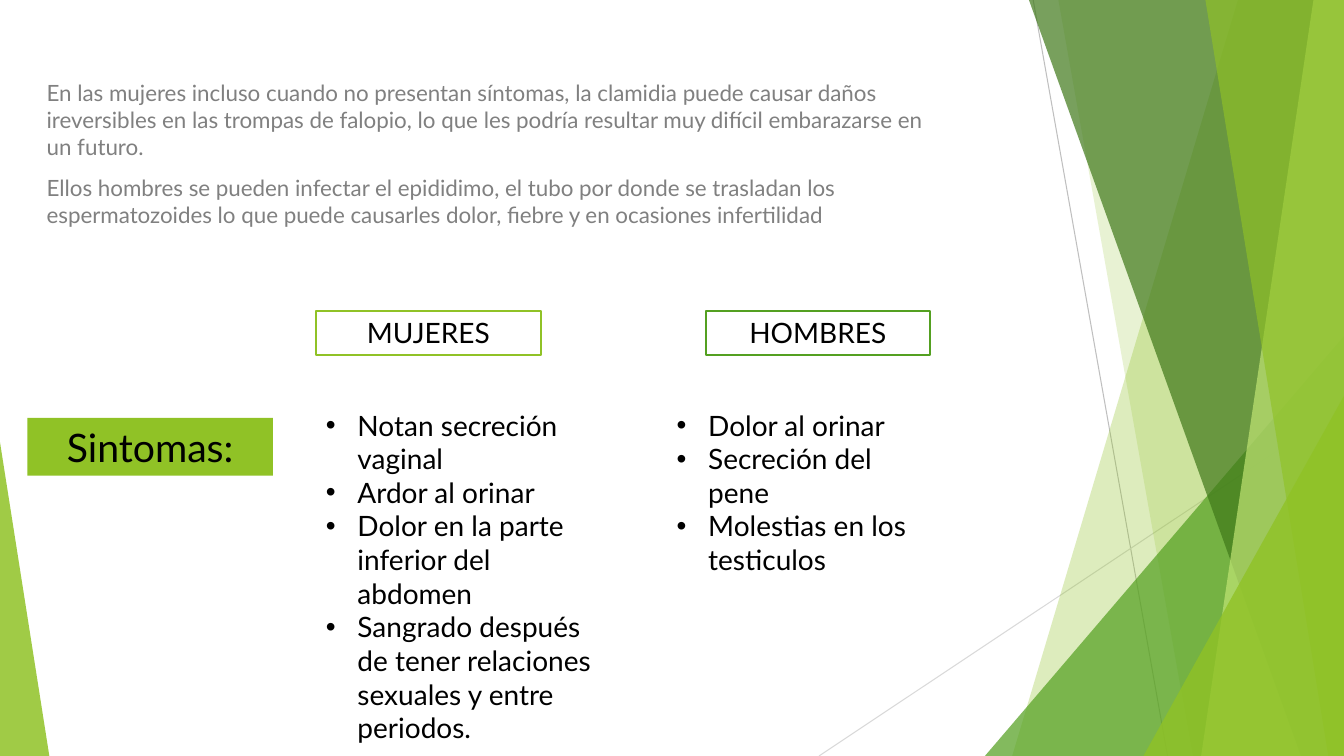
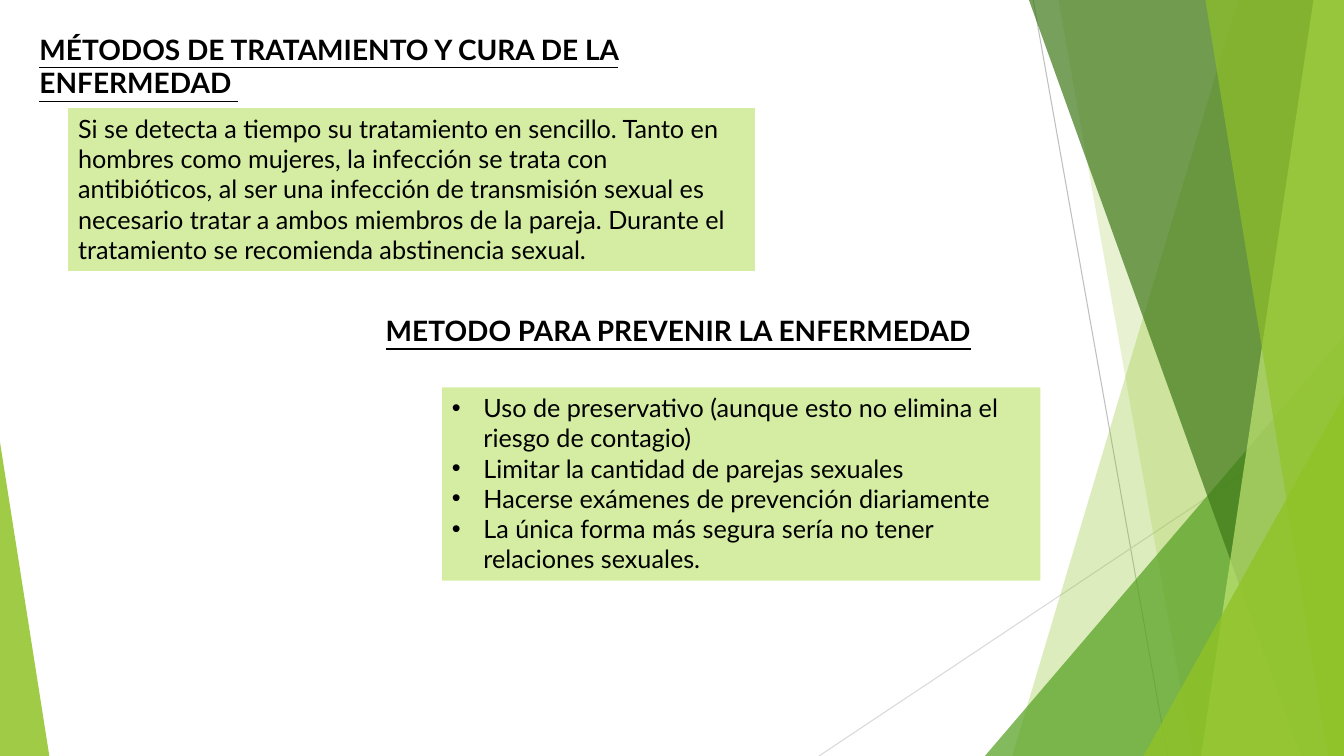
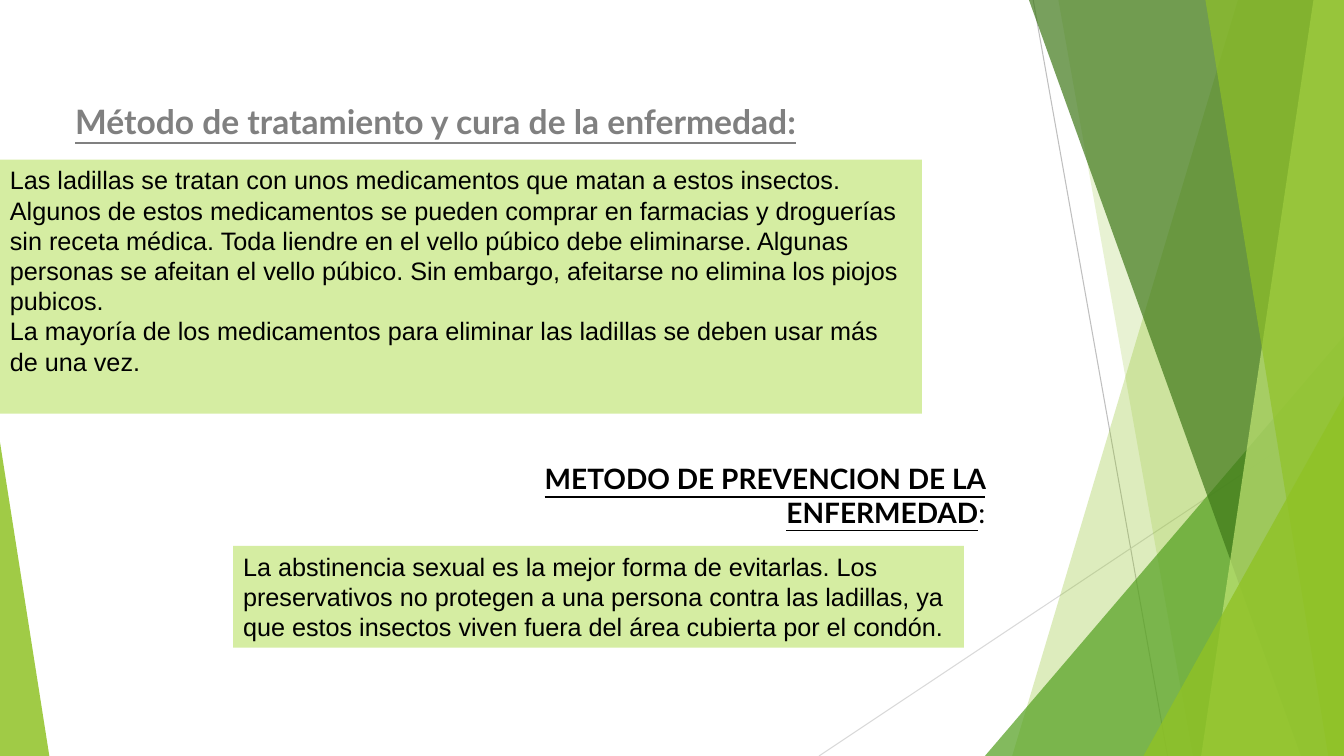
from lxml.etree import SubElement
from pptx import Presentation
from pptx.dml.color import RGBColor
from pptx.enum.shapes import MSO_CONNECTOR, MSO_SHAPE
from pptx.enum.text import MSO_ANCHOR, MSO_AUTO_SIZE, PP_ALIGN
from pptx.oxml.ns import qn
from pptx.util import Pt

PX = 9525  # EMU in one px
WIDTH, HEIGHT = 1280, 720
TITLE_ONLY, BLANK = 5, 6

LIME, GREEN, FOREST = "90C226", "54A021", "3F7819"
PALE, MINT = "C0E474", "D5EDA2"
BLACK, GRAY, WHITE = "000000", "808080", "FFFFFF"
LEFT, CENTER, RIGHT = PP_ALIGN.LEFT, PP_ALIGN.CENTER, PP_ALIGN.RIGHT


def px(*lengths):
    return [length * PX for length in lengths]


def rgb(color):
    return RGBColor.from_string(color)


def paint(shape, color, opacity=100, line=None):
    """Flat fill, with an optional outline and transparency."""
    shape.shadow.inherit = False
    shape.fill.solid()
    shape.fill.fore_color.rgb = rgb(color)
    if opacity < 100:
        tint = shape.fill._xPr.find(".//" + qn("a:srgbClr"))
        SubElement(tint, qn("a:alpha"), val=str(opacity * 1000))
    if line:
        shape.line.color.rgb = rgb(line)
        shape.line.width = Pt(1.5)
    else:
        shape.line.fill.background()


# Backdrop shared by every slide

def thin_line(page, start, end, color):
    line = page.shapes.add_connector(MSO_CONNECTOR.STRAIGHT, *px(*start, *end))
    line.line.color.rgb = rgb(color)
    line.line.width = Pt(0.75)
    SubElement(line._element.spPr, qn("a:effectLst"))


def slanted_band(page, top_x, bottom_x, color, opacity):
    """Full-height band from a slanted left edge to the right margin."""
    outline = page.shapes.build_freeform(top_x, 0, scale=PX)
    outline.add_line_segments([(WIDTH, 0), (WIDTH, HEIGHT), (bottom_x, HEIGHT)])
    paint(outline.convert_to_shape(), color, opacity)


def corner_triangle(page, left, top, width, apex, color, opacity):
    """Triangle standing on the bottom edge; apex 0 is left, 1 is right."""
    shape = page.shapes.add_shape(MSO_SHAPE.ISOSCELES_TRIANGLE,
                                  *px(left, top, width, HEIGHT - top))
    shape.adjustments[0] = apex
    paint(shape, color, opacity)


def backdrop(page):
    thin_line(page, (984, 0), (1112, HEIGHT), "BFBFBF")
    thin_line(page, (WIDTH, 387), (780, HEIGHT), "D9D9D9")
    slanted_band(page, 1179, 964, LIME, 30)
    slanted_band(page, 1008, 1136, LIME, 20)
    corner_triangle(page, 938, 320, 342, 1, GREEN, 72)
    slanted_band(page, 980, 1239, FOREST, 70)
    slanted_band(page, 1251, 1144, PALE, 70)
    slanted_band(page, 1148, 1265, LIME, 65)
    corner_triangle(page, 1089, 377, 191, 1, LIME, 80)
    corner_triangle(page, 0, 421, 47, 0, LIME, 85)


# Text

def add_bullet(para):
    props = para._p.get_or_add_pPr()
    props.set("marL", str(30 * PX))
    props.set("indent", str(-30 * PX))
    SubElement(props, qn("a:buFont"), typeface="Arial")
    SubElement(props, qn("a:buChar"), char="•")


def style(font, size, color, name, strong):
    font.size, font.name = Pt(size), name
    font.color.rgb = rgb(color)
    font.bold = font.underline = strong


def write(shape, texts, size, color=BLACK, name="Lato", align=LEFT,
          strong=False, bullets=False, gap=0):
    frame = shape.text_frame
    frame.word_wrap = True
    frame.auto_size = MSO_AUTO_SIZE.NONE
    frame.vertical_anchor = MSO_ANCHOR.TOP
    for index, text in enumerate(texts):
        para = frame.add_paragraph() if index else frame.paragraphs[0]
        para.text = text
        para.alignment = align
        para.space_before = Pt(gap if index else 0)
        if bullets:
            add_bullet(para)
        style(para.font, size, color, name, strong)


def text_box(page, box, texts, size, **options):
    shape = page.shapes.add_textbox(*px(*box))
    write(shape, texts, size, **options)
    return shape


def panel(page, box, texts, size, fill=MINT, line=None, **options):
    shape = page.shapes.add_shape(MSO_SHAPE.RECTANGLE, *px(*box))
    paint(shape, fill, line=line)
    write(shape, texts, size, **options)


def title(page, box, text, size, color=BLACK):
    shape = page.shapes.title
    shape.left, shape.top, shape.width, shape.height = px(*box)
    write(shape, [text], size, color=color, strong=True)


def new_page(deck, layout):
    page = deck.slides.add_slide(deck.slide_layouts[layout])
    for holder in list(page.placeholders):
        if holder != page.shapes.title:
            holder._element.getparent().remove(holder._element)
    backdrop(page)
    return page


# Slides

def symptom_column(page, label_left, list_left, list_width, label, line, items):
    panel(page, (label_left, 296, 214, 42), [label], 20,
          fill=WHITE, line=line, align=CENTER)
    text_box(page, (list_left, 384, list_width, 336), items, 20, bullets=True)


def symptoms_slide(deck):
    page = new_page(deck, BLANK)
    text_box(page, (35, 71, 863, 135), [
        "En las mujeres incluso cuando no presentan síntomas, la clamidia puede "
        "causar daños ireversibles en las trompas de falopio, lo que les podría "
        "resultar muy difícil embarazarse en un futuro.",
        "Ellos hombres se pueden infectar el epididimo, el tubo por donde se "
        "trasladan los espermatozoides lo que puede causarles dolor, fiebre y en "
        "ocasiones infertilidad",
    ], 16, color=GRAY, gap=10)
    panel(page, (26, 398, 234, 55), ["Sintomas:"], 28, fill=LIME, align=CENTER)
    symptom_column(page, 301, 301, 285, "MUJERES", LIME, [
        "Notan secreción vaginal",
        "Ardor al orinar",
        "Dolor en la parte inferior del abdomen",
        "Sangrado después de tener relaciones sexuales y entre periodos.",
    ])
    symptom_column(page, 672, 635, 263, "HOMBRES", GREEN, [
        "Dolor al orinar",
        "Secreción del pene",
        "Molestias en los testiculos",
    ])


def treatment_slide(deck):
    page = new_page(deck, TITLE_ONLY)
    title(page, (28, 26, 717, 77),
          "MÉTODOS DE TRATAMIENTO Y CURA DE LA ENFERMEDAD ", 20)
    panel(page, (65, 103, 654, 155), [
        "Si se detecta a tiempo su tratamiento en sencillo. Tanto en hombres como "
        "mujeres, la infección se trata con antibióticos, al ser una infección de "
        "transmisión sexual es necesario tratar a ambos miembros de la pareja. "
        "Durante el tratamiento se recomienda abstinencia sexual.",
    ], 18)
    text_box(page, (323, 294, 611, 42), ["METODO PARA PREVENIR LA ENFERMEDAD"],
             20, align=RIGHT, strong=True)
    panel(page, (421, 369, 570, 184), [
        "Uso de preservativo (aunque esto no elimina el riesgo de contagio)",
        "Limitar la cantidad de parejas sexuales",
        "Hacerse exámenes de prevención diariamente",
        "La única forma más segura sería no tener relaciones sexuales.",
    ], 18, bullets=True)


def lice_slide(deck):
    page = new_page(deck, TITLE_ONLY)
    title(page, (62, 91, 902, 90),
          "Método de tratamiento y cura de la enfermedad:", 24, color=GRAY)
    panel(page, (0, 152, 878, 242), [
        "Las ladillas se tratan con unos medicamentos que matan a estos insectos. "
        "Algunos de estos medicamentos se pueden comprar en farmacias y droguerías "
        "sin receta médica. Toda liendre en el vello púbico debe eliminarse. "
        "Algunas personas se afeitan el vello púbico. Sin embargo, afeitarse no "
        "elimina los piojos pubicos.",
        "La mayoría de los medicamentos para eliminar las ladillas se deben usar "
        "más de una vez.",
    ], 18, name="Arial")
    heading = text_box(page, (332, 435, 616, 74),
                       ["METODO DE PREVENCION DE LA ENFERMEDAD"],
                       20, align=RIGHT, strong=True)
    colon = heading.text_frame.paragraphs[0].add_run()
    colon.text = ":"
    colon.font.bold = colon.font.underline = False
    panel(page, (222, 520, 696, 97), [
        "La abstinencia sexual es la mejor forma de evitarlas. Los preservativos no "
        "protegen a una persona contra las ladillas, ya que estos insectos viven "
        "fuera del área cubierta por el condón.",
    ], 18, name="Arial")


def main():
    deck = Presentation()
    deck.slide_width, deck.slide_height = px(WIDTH, HEIGHT)
    symptoms_slide(deck)
    treatment_slide(deck)
    lice_slide(deck)
    deck.save("out.pptx")


if __name__ == "__main__":
    main()
